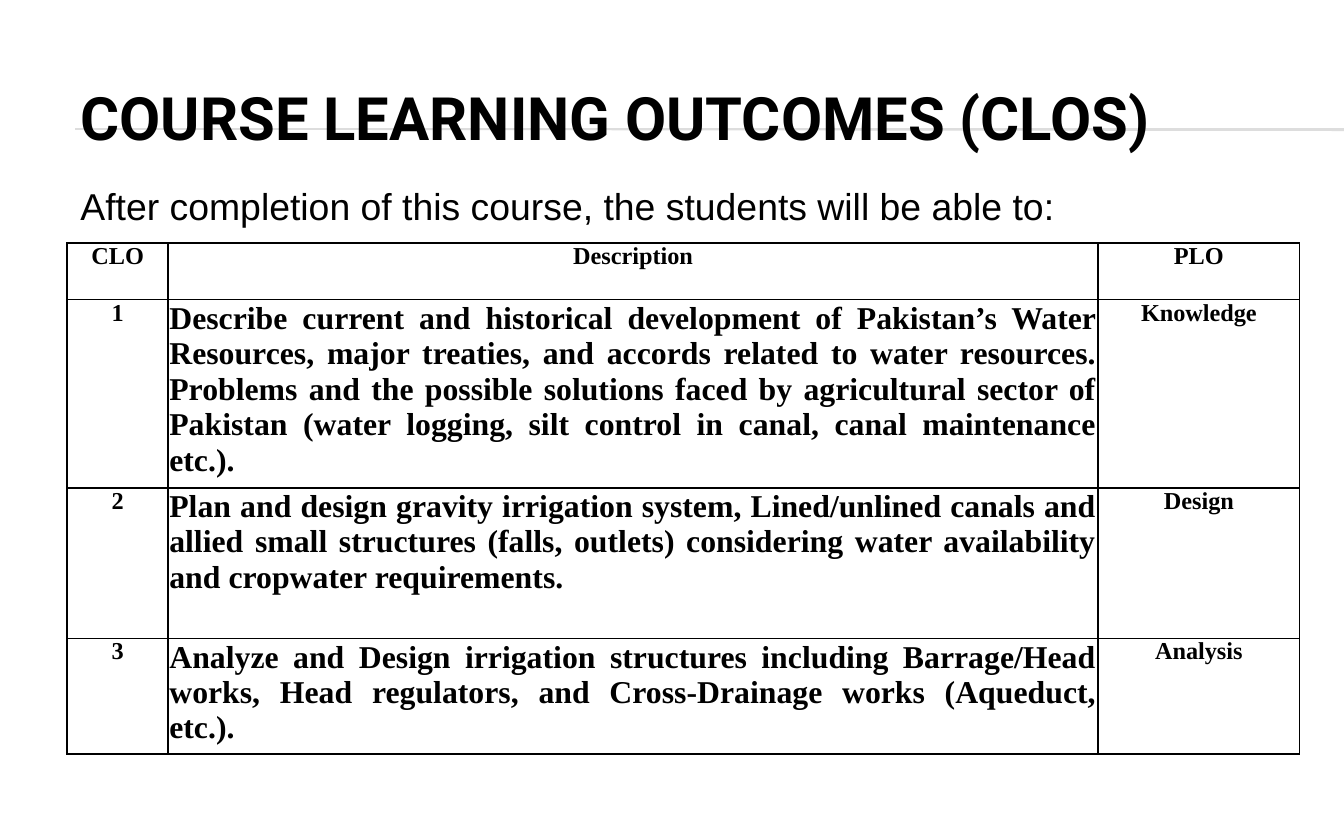
from typing import NamedTuple

from lxml.etree import SubElement
from pptx import Presentation
from pptx.dml.color import RGBColor
from pptx.enum.shapes import MSO_CONNECTOR
from pptx.enum.text import MSO_ANCHOR, PP_ALIGN
from pptx.oxml.ns import qn
from pptx.util import Inches, Pt

BLACK = RGBColor(0x00, 0x00, 0x00)
GREY = RGBColor(0xDD, 0xDD, 0xDD)

SERIF = {"name": "Times New Roman", "bold": True}
HEAD = {"name": "Roboto", "size": Pt(32), "bold": True}
LEAD = {"name": "Arial", "size": Pt(20), "bold": False}


class Style(NamedTuple):
    size: float
    align: PP_ALIGN
    side: float
    top: float
    hang: float = 0


class Goal(NamedTuple):
    num: str
    text: str
    field: str
    high: float


LABEL = Style(13, PP_ALIGN.CENTER, 0.07, 0)
NUMBER = LABEL._replace(hang=0.38)
BODY = Style(17, PP_ALIGN.JUSTIFY, 0.01, 0.01)

WIDTHS = (0.75, 6.92, 1.5)
GOALS = (
    Goal("CLO", "Description", "PLO", 0.42),
    Goal("1", "Describe current and historical development of Pakistan’s Water "
         "Resources, major treaties, and accords related to water resources. "
         "Problems and the possible solutions faced by agricultural sector of "
         "Pakistan (water logging, silt control in canal, canal maintenance "
         "etc.).", "Knowledge", 1.4),
    Goal("2", "Plan and design gravity irrigation system, Lined/unlined canals and "
         "allied small structures (falls, outlets) considering water availability "
         "and cropwater requirements.", "Design", 1.12),
    Goal("3", "Analyze and Design irrigation structures including Barrage/Head "
         "works, Head regulators, and Cross-Drainage works (Aqueduct, etc.).",
         "Analysis", 0.86),
)


def put(item, values: dict) -> None:
    for key, value in values.items():
        setattr(item, key, value)


def write(frame, text: str, font: dict, align: PP_ALIGN):
    para = frame.paragraphs[0]
    para.alignment = align
    run = para.add_run()
    run.text = text
    put(run.font, font)
    run.font.color.rgb = BLACK
    return para


def rule(slide, end: float) -> None:
    line = slide.shapes.add_connector(
        MSO_CONNECTOR.STRAIGHT, Inches(0.56), Inches(0.96), Inches(10), Inches(end))
    line.line.color.rgb = GREY
    line.line.width = Pt(0.75)
    SubElement(line._element.spPr, qn("a:effectLst"))


def border(cell) -> None:
    props = cell._tc.get_or_add_tcPr()
    for spot, side in enumerate(("lnL", "lnR", "lnT", "lnB")):
        edge = SubElement(props, qn(f"a:{side}"), w=str(Pt(1)))
        fill = SubElement(edge, qn("a:solidFill"))
        SubElement(fill, qn("a:srgbClr"), val=str(BLACK))
        props.insert(spot, edge)


def fill_cell(cell, text: str, style: Style) -> None:
    cell.fill.background()
    border(cell)
    put(cell, {"margin_left": Inches(style.side), "margin_right": Inches(style.side),
               "margin_top": Inches(style.top), "margin_bottom": 0,
               "vertical_anchor": MSO_ANCHOR.TOP})
    para = write(cell.text_frame, text, SERIF | {"size": Pt(style.size)}, style.align)
    if style.hang:
        props = para._p.get_or_add_pPr()
        props.set("marL", str(Inches(style.hang)))
        props.set("indent", str(-Inches(style.hang)))


def add_goals(slide) -> None:
    highs = [goal.high for goal in GOALS]
    frame = slide.shapes.add_table(
        len(GOALS), len(WIDTHS), Inches(0.5), Inches(1.81),
        Inches(sum(WIDTHS)), Inches(sum(highs)))
    table = frame.table
    put(table, {"first_row": False, "horz_banding": False})
    for col, width in zip(table.columns, WIDTHS):
        col.width = Inches(width)
    for i, (row, goal) in enumerate(zip(table.rows, GOALS)):
        row.height = Inches(goal.high)
        styles = (NUMBER, BODY if i else LABEL, LABEL)
        for cell, text, style in zip(row.cells, goal[:3], styles):
            fill_cell(cell, text, style)


def main() -> None:
    deck = Presentation()
    put(deck, {"slide_width": Inches(10), "slide_height": Inches(6.25)})
    slide = deck.slides.add_slide(deck.slide_layouts[5])

    # Rules behind the title
    for end in (0.96, 0.97):
        rule(slide, end)

    # Title, brought in front of the rules
    title = slide.shapes.title
    put(title, {"left": Inches(0.5), "top": Inches(0.42),
                "width": Inches(9), "height": Inches(0.9)})
    title.text_frame.vertical_anchor = MSO_ANCHOR.MIDDLE
    write(title.text_frame, "COURSE LEARNING OUTCOMES (CLOS)", HEAD, PP_ALIGN.LEFT)
    slide.shapes._spTree.append(title._element)

    # Outcomes table
    add_goals(slide)

    # Lead-in sentence
    lead = slide.shapes.add_textbox(Inches(0.5), Inches(1.32), Inches(9), Inches(0.42))
    put(lead.text_frame, {"word_wrap": True, "vertical_anchor": MSO_ANCHOR.MIDDLE})
    write(lead.text_frame, "After completion of this course, the students will be able to:",
          LEAD, PP_ALIGN.LEFT)

    deck.save("out.pptx")


if __name__ == "__main__":
    main()
